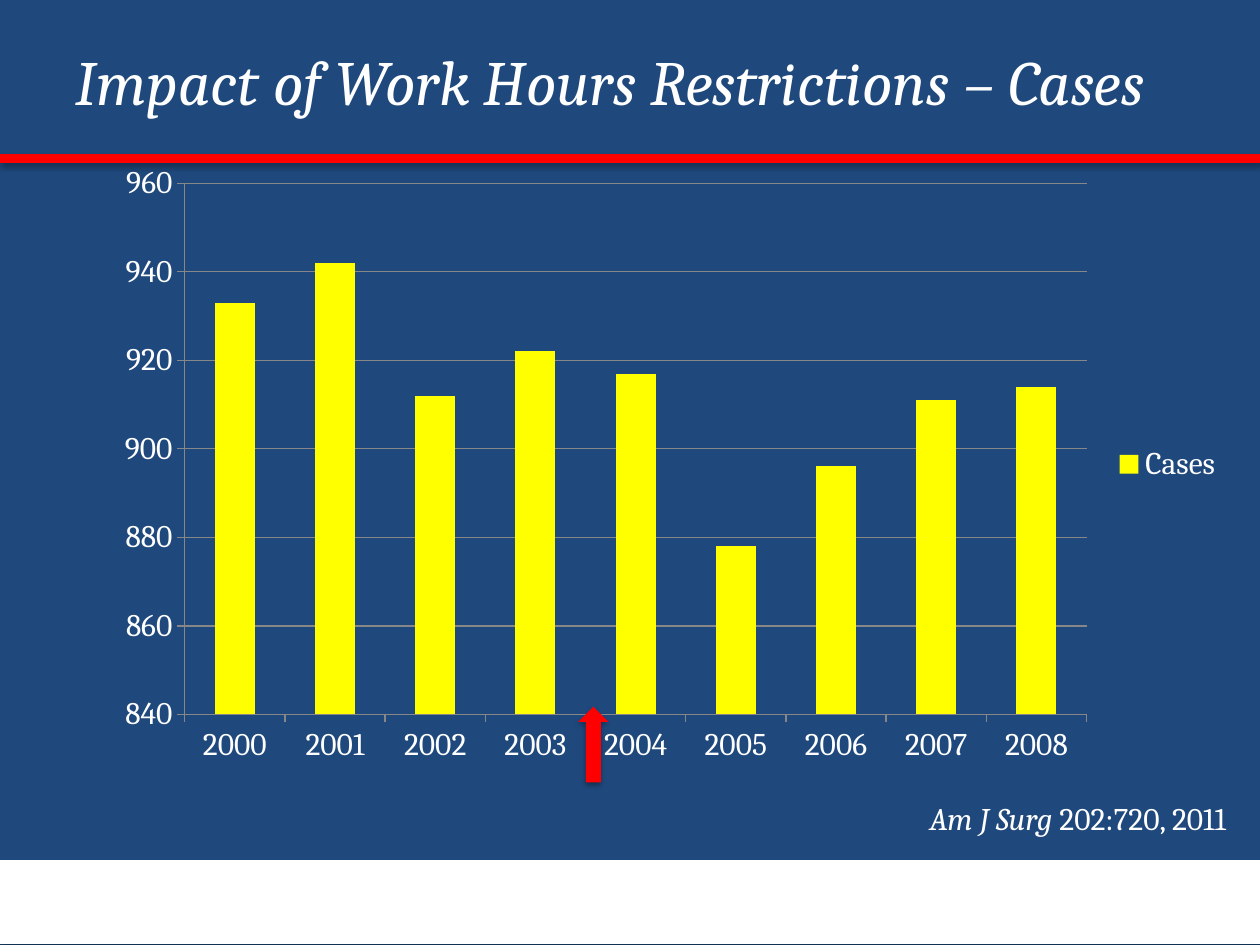
from dataclasses import dataclass

import pptx
import pptx.chart.data
import pptx.dml.color
import pptx.enum.chart
import pptx.enum.shapes
import pptx.enum.text
import pptx.oxml
import pptx.oxml.ns
import pptx.util

Pt = pptx.util.Pt
Shapes = pptx.enum.shapes.MSO_SHAPE
FONT = "Cambria"
NAVY, WHITE, RED, YELLOW, GREY = "1F497D", "FFFFFF", "FF0000", "FFFF00", "878787"
CASES = {
    2000: 933, 2001: 942, 2002: 912, 2003: 922, 2004: 917,
    2005: 878, 2006: 896, 2007: 911, 2008: 914,
}


@dataclass
class Box:
    left: float
    top: float
    width: float
    height: float

    def lengths(self) -> list:
        return [Pt(v) for v in (self.left, self.top, self.width, self.height)]


@dataclass
class Run:
    text: str
    size: float
    italic: bool = False


def rgb(value: str) -> pptx.dml.color.RGBColor:
    return pptx.dml.color.RGBColor.from_string(value)


def paint(fill, color: str) -> None:
    fill.solid()
    fill.fore_color.rgb = rgb(color)


def style_font(font, size: float, italic: bool = False) -> None:
    font.name = FONT
    font.size = Pt(size)
    font.italic = italic
    font.color.rgb = rgb(WHITE)


def add_shadow(sp, distance: float, opacity: int) -> None:
    sp._element.spPr.append(pptx.oxml.parse_xml(
        f'<a:effectLst {pptx.oxml.ns.nsdecls("a")}>'
        f'<a:outerShdw blurRad="{Pt(3.1)}" dist="{Pt(distance)}" dir="5400000" rotWithShape="0">'
        f'<a:srgbClr val="000000"><a:alpha val="{opacity * 1000}"/></a:srgbClr>'
        '</a:outerShdw></a:effectLst>'
    ))


def add_rule(slide, y: float, width: float) -> None:
    sp = slide.shapes.add_connector(
        pptx.enum.shapes.MSO_CONNECTOR.STRAIGHT, Pt(0), Pt(y), Pt(width), Pt(y))
    sp.line.color.rgb = rgb(RED)
    sp.line.width = Pt(5)
    add_shadow(sp, 1.6, 38)


def add_block(slide, kind, box: Box, color: str, outlined: bool) -> None:
    sp = slide.shapes.add_shape(kind, *box.lengths())
    paint(sp.fill, color)
    if outlined:
        sp.line.color.rgb = rgb(color)
        sp.line.width = Pt(0.75)
    else:
        sp.line.fill.background()
    add_shadow(sp, 1.8, 35)


def add_text(slide, box: Box, runs: list[Run], wrap: bool) -> None:
    tf = slide.shapes.add_textbox(*box.lengths()).text_frame
    tf.word_wrap = wrap
    if wrap:
        tf.vertical_anchor = pptx.enum.text.MSO_ANCHOR.MIDDLE
    else:
        tf.auto_size = pptx.enum.text.MSO_AUTO_SIZE.SHAPE_TO_FIT_TEXT
    p = tf.paragraphs[0]
    for run in runs:
        r = p.add_run()
        r.text = run.text
        style_font(r.font, run.size, run.italic)


def add_cases_chart(slide, box: Box) -> None:
    data = pptx.chart.data.CategoryChartData()
    data.categories = [str(year) for year in CASES]
    data.add_series("Cases", CASES.values())
    chart = slide.shapes.add_chart(
        pptx.enum.chart.XL_CHART_TYPE.COLUMN_CLUSTERED, *box.lengths(), data).chart
    style_font(chart.font, 18)
    chart.has_title = False
    chart.has_legend = True
    chart.legend.position = pptx.enum.chart.XL_LEGEND_POSITION.RIGHT
    chart.legend.include_in_layout = False
    style_font(chart.legend.font, 18)

    plot = chart.plots[0]
    plot.gap_width = 150
    plot.vary_by_categories = False
    paint(plot.series[0].format.fill, YELLOW)

    for axis in (chart.category_axis, chart.value_axis):
        axis.major_tick_mark = pptx.enum.chart.XL_TICK_MARK.OUTSIDE
        axis.format.line.color.rgb = rgb(GREY)
        style_font(axis.tick_labels.font, 18)
    values = chart.value_axis
    values.minimum_scale, values.maximum_scale, values.major_unit = 840, 960, 20
    values.has_major_gridlines = True
    values.major_gridlines.format.line.color.rgb = rgb(GREY)


def main() -> None:
    prs = pptx.Presentation()
    prs.slide_width, prs.slide_height = Pt(720), Pt(540)
    slide = prs.slides.add_slide(prs.slide_layouts[6])
    paint(slide.background.fill, NAVY)

    add_rule(slide, 90.72, 720)
    add_block(slide, Shapes.RECTANGLE, Box(0, 492, 720, 46.8), WHITE, True)
    add_text(slide, Box(36, 0.72, 684, 90),
             [Run("Impact of Work Hours Restrictions – Cases", 36, True)], True)
    add_cases_chart(slide, Box(58.32, 87.12, 648, 356.4))
    add_block(slide, Shapes.UP_ARROW, Box(330.48, 403.92, 17.28, 43.2), RED, False)
    add_text(slide, Box(524.16, 452.88, 201.6, 28.8),
             [Run("Am J Surg ", 18, True), Run("202:720, 2011", 18)], False)
    prs.save("out.pptx")


if __name__ == "__main__":
    main()
